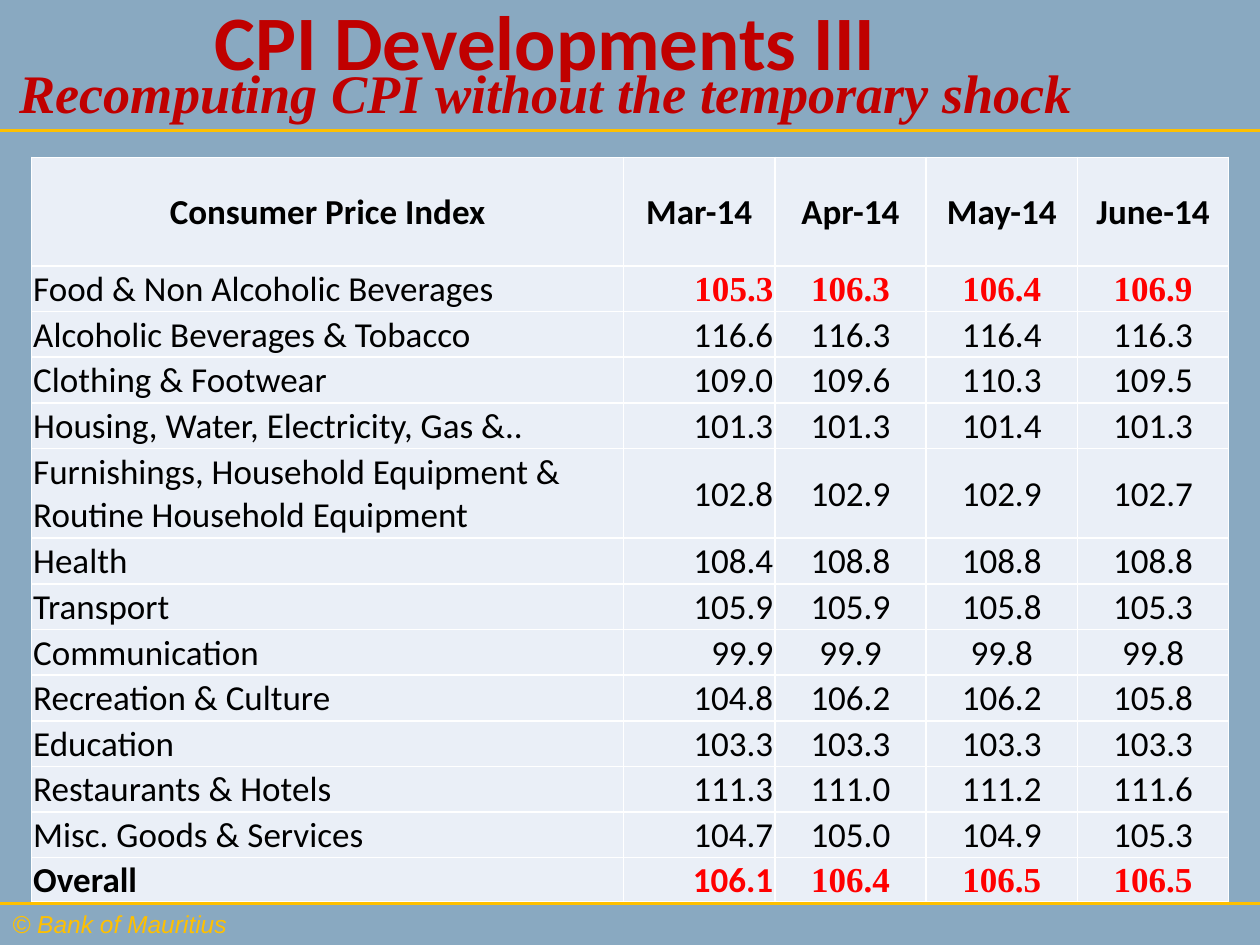
from dataclasses import dataclass
from lxml.etree import SubElement as Sub
from pptx import Presentation
from pptx.dml.color import RGBColor as Rgb
from pptx.enum.text import MSO_ANCHOR as Anchor, MSO_AUTO_SIZE as Fit, PP_ALIGN as Align
from pptx.oxml.ns import qn
from pptx.util import Cm, Pt


@dataclass(frozen=True)
class Theme:
    back: Rgb = Rgb.from_string("89A9C1")
    gold: Rgb = Rgb.from_string("FFC000")
    title: Rgb = Rgb.from_string("C00000")
    text: Rgb = Rgb.from_string("000000")
    alert: Rgb = Rgb.from_string("FF0000")
    cell: Rgb = Rgb.from_string("EAEFF7")
    grid: str = "FFFFFF"
    sans: str = "Calibri"
    serif: str = "Times New Roman"
    foot: str = "Arial"
    head_size: int = 44
    sub_size: int = 31
    body_size: int = 20
    foot_size: int = 14


THEME = Theme()
HEADS = ["Consumer Price Index", "Mar-14", "Apr-14", "May-14", "June-14"]
ROWS = [
    ("Food & Non Alcoholic Beverages", 105.3, 106.3, 106.4, 106.9),
    ("Alcoholic Beverages & Tobacco", 116.6, 116.3, 116.4, 116.3),
    ("Clothing & Footwear", 109.0, 109.6, 110.3, 109.5),
    ("Housing, Water, Electricity, Gas &..", 101.3, 101.3, 101.4, 101.3),
    ("Furnishings, Household Equipment & Routine Household Equipment",
     102.8, 102.9, 102.9, 102.7),
    ("Health", 108.4, 108.8, 108.8, 108.8),
    ("Transport", 105.9, 105.9, 105.8, 105.3),
    ("Communication", 99.9, 99.9, 99.8, 99.8),
    ("Recreation & Culture", 104.8, 106.2, 106.2, 105.8),
    ("Education", 103.3, 103.3, 103.3, 103.3),
    ("Restaurants & Hotels", 111.3, 111.0, 111.2, 111.6),
    ("Misc. Goods & Services", 104.7, 105.0, 104.9, 105.3),
    ("Overall", 106.1, 106.4, 106.5, 106.5),
]


def put(item, **vals):
    for name, val in vals.items():
        setattr(item, name, val)


def write(para, text, color, **font):
    run = para.add_run()
    run.text = text
    put(run.font, **font)
    run.font.color.rgb = color


def add_rule(slide, left, top, width):
    line = slide.shapes.add_connector(1, Cm(left + width), Cm(top), Cm(left), Cm(top))
    line.line.color.rgb = THEME.gold
    line.line.width = Pt(1.75)
    Sub(line._element.spPr, qn("a:effectLst"))


def add_title(slide, left, top, width, height):
    title = slide.shapes.title
    put(title, left=Cm(left), top=Cm(top), width=Cm(width), height=Cm(height))
    frame = title.text_frame
    put(frame, auto_size=Fit.NONE, word_wrap=True, vertical_anchor=Anchor.MIDDLE)
    para = frame.paragraphs[0]
    put(para, alignment=Align.CENTER, line_spacing=0.6)
    write(para, "CPI Developments III", THEME.title, name=THEME.sans,
          size=Pt(THEME.head_size), bold=True)
    para.add_line_break()
    write(para, "Recomputing CPI without the temporary shock", THEME.title,
          name=THEME.serif, size=Pt(THEME.sub_size), bold=True, italic=True)


def add_footer(slide, left, top, width, height):
    box = slide.shapes.add_textbox(Cm(left), Cm(top), Cm(width), Cm(height))
    box.text_frame.word_wrap = True
    write(box.text_frame.paragraphs[0], "© Bank of Mauritius", THEME.gold,
          name=THEME.foot, size=Pt(THEME.foot_size), italic=True)


def style_cell(cell):
    """Set the insets, white borders and fill of a cell."""
    put(cell, margin_left=Cm(0.03), margin_right=Cm(0.03), margin_top=Cm(0.03),
        margin_bottom=0, vertical_anchor=Anchor.MIDDLE)
    props = cell._tc.get_or_add_tcPr()
    for side in ("lnL", "lnR", "lnT", "lnB"):
        edge = Sub(props, qn(f"a:{side}"), w=str(Pt(1)))
        Sub(Sub(edge, qn("a:solidFill")), qn("a:srgbClr"), val=THEME.grid)
    cell.fill.solid()
    cell.fill.fore_color.rgb = THEME.cell


def add_prices(slide, left, top, width, height):
    last = len(ROWS)
    grid = slide.shapes.add_table(last + 1, len(HEADS), Cm(left), Cm(top),
                                  Cm(width), Cm(height)).table
    month = 3.05
    for c, col in enumerate(grid.columns):
        col.width = Cm(month if c else width - month * (len(HEADS) - 1))
    tall = {0: 2.19, 5: 1.81, last: 0.84}
    for r, row in enumerate(grid.rows):
        row.height = Cm(tall.get(r, 0.92))

    for r, vals in enumerate([HEADS, *ROWS]):
        for c, val in enumerate(vals):
            cell = grid.cell(r, c)
            style_cell(cell)
            para = cell.text_frame.paragraphs[0]
            if r == 0 or c > 1:
                para.alignment = Align.CENTER
            else:
                para.alignment = Align.RIGHT if c else Align.LEFT
            hot = c > 0 and r in (1, last)
            serif = hot and (r, c) != (last, 1)
            write(para, f"{val:.1f}" if r and c else val,
                  THEME.alert if hot else THEME.text,
                  name=THEME.serif if serif else THEME.sans,
                  size=Pt(THEME.body_size), bold=hot or r in (0, last))


def main():
    deck = Presentation()
    put(deck, slide_width=Cm(25.4), slide_height=Cm(19.05))
    slide = deck.slides.add_slide(deck.slide_layouts[5])
    slide.background.fill.solid()
    slide.background.fill.fore_color.rgb = THEME.back
    for top in (2.64, 18.21):
        add_rule(slide, 0, top, 25.4)
    add_footer(slide, 0, 18.21, 9.1, 0.86)
    add_title(slide, -0.43, 0, 22.86, 2.97)
    add_prices(slide, 0.64, 3.17, 24.13, 14.96)
    deck.save("out.pptx")


if __name__ == "__main__":
    main()
